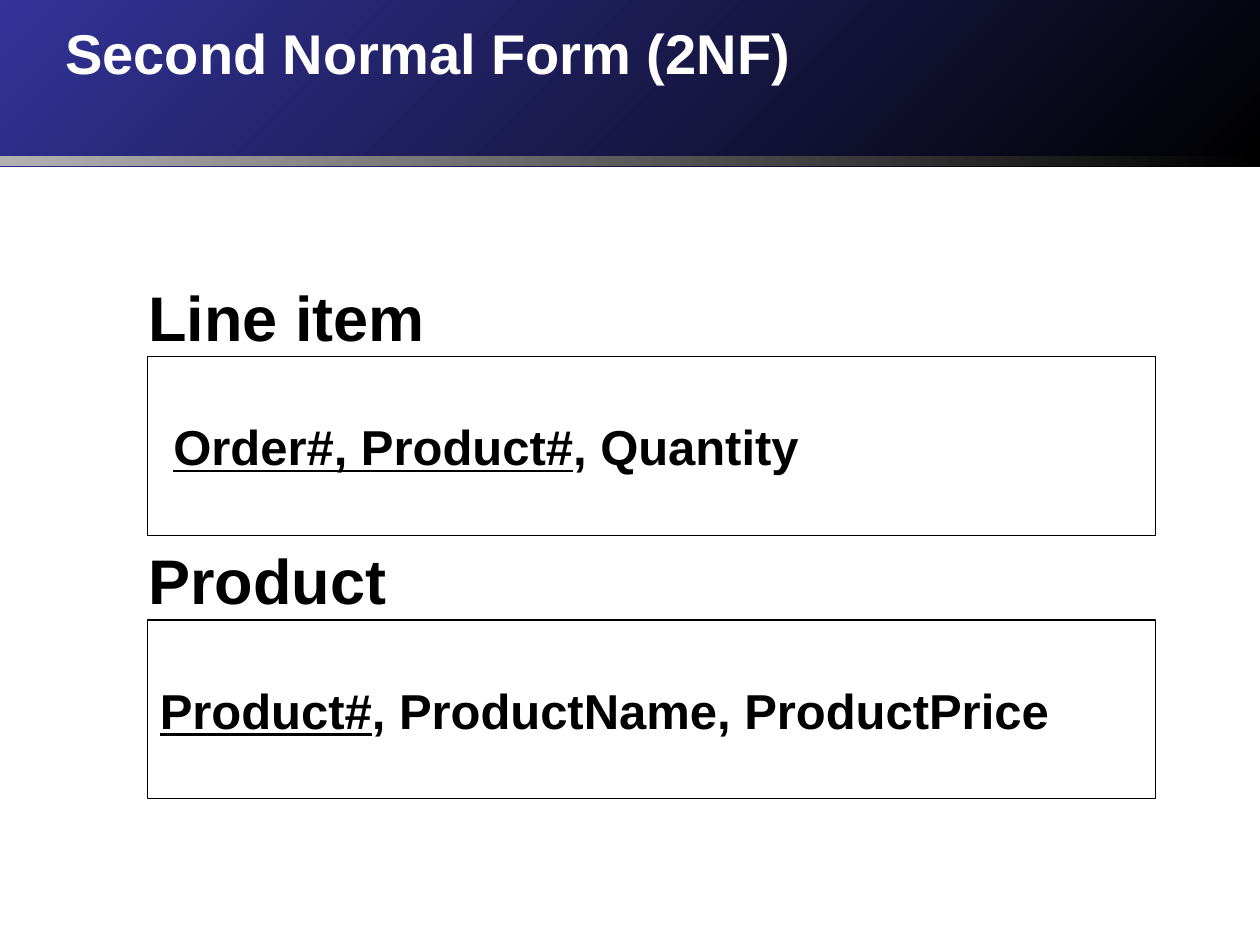
from pptx import Presentation
from pptx import util as u
from pptx.dml.color import RGBColor
from pptx.enum import shapes, text
from pptx.oxml import parse_xml
from pptx.oxml.ns import nsdecls

COLORS = {"blue": "333399", "gray": "B2B2B2", "black": "000000", "white": "FFFFFF"}
FONT = "Arial"

# Each relation: heading, heading width, runs of (text, is key)
RELATIONS = [
    ("Line item", 2.4,
     [(" ", False), ("Order#, Product#", True), (", Quantity", False)]),
    ("Product", 2.09,
     [("Product#", True), (", ProductName, ProductPrice", False)]),
]
FIRST_TOP, PITCH, BOX_OFFSET = 2.16, 2.09, 0.67


def color(name):
    return RGBColor.from_string(COLORS[name])


def place(left, top, width, height):
    return [u.Inches(value) for value in (left, top, width, height)]


def style(para, size, name):
    font = para.font
    font.name, font.size, font.bold = FONT, u.Pt(size), True
    font.color.rgb = color(name)


def add_rectangle(page, *area):
    box = page.shapes.add_shape(shapes.MSO_SHAPE.RECTANGLE, *place(*area))
    box.shadow.inherit = False
    return box


def add_band(page, top, height, start, angle):
    band = add_rectangle(page, 0, top, 10, height)
    band.line.fill.background()
    band.fill.gradient()
    band.fill.gradient_angle = angle
    for stop, name in zip(band.fill.gradient_stops, (start, "black")):
        stop.color.rgb = color(name)


def add_label(page, words, area, size, name, wrap):
    box = page.shapes.add_textbox(*place(*area))
    box.text_frame.word_wrap = wrap
    para = box.text_frame.paragraphs[0]
    span = para.add_run()
    span.text = words
    style(para, size, name)
    return box, span


def add_text_shadow(span):
    span.font._element.append(parse_xml(
        f'<a:effectLst {nsdecls("a")}>'
        '<a:outerShdw dist="38100" dir="2700000" algn="tl">'
        f'<a:srgbClr val="{COLORS["black"]}"/></a:outerShdw></a:effectLst>'))


def add_relation(page, top, heading, width, fields):
    label, _ = add_label(page, heading, (1.08, top, width, 0.7), 36, "black", False)
    label.text_frame.auto_size = text.MSO_AUTO_SIZE.SHAPE_TO_FIT_TEXT

    box = add_rectangle(page, 1.17, top + BOX_OFFSET, 8, 1.42)
    box.fill.solid()
    box.fill.fore_color.rgb = color("white")
    box.line.color.rgb = color("black")
    box.line.width = u.Pt(0.75)
    frame = box.text_frame
    frame.word_wrap = False
    frame.vertical_anchor = text.MSO_ANCHOR.MIDDLE
    para = frame.paragraphs[0]
    para.alignment = text.PP_ALIGN.LEFT
    style(para, 28, "black")
    for words, is_key in fields:
        span = para.add_run()
        span.text = words
        span.font.underline = is_key


def main():
    deck = Presentation()
    deck.slide_width, deck.slide_height = u.Inches(10), u.Inches(7.5)
    page = deck.slides.add_slide(deck.slide_layouts[6])

    # Header bands and title
    add_band(page, 0, 1.32, "blue", 315)
    add_band(page, 1.24, 0.08, "gray", 0)
    _, title = add_label(page, "Second Normal Form (2NF)",
                         (0.42, 0.1, 9.08, 1), 32, "white", True)
    add_text_shadow(title)

    # Relations with their underlined keys
    for index, relation in enumerate(RELATIONS):
        add_relation(page, FIRST_TOP + index * PITCH, *relation)

    deck.save("out.pptx")


if __name__ == "__main__":
    main()
